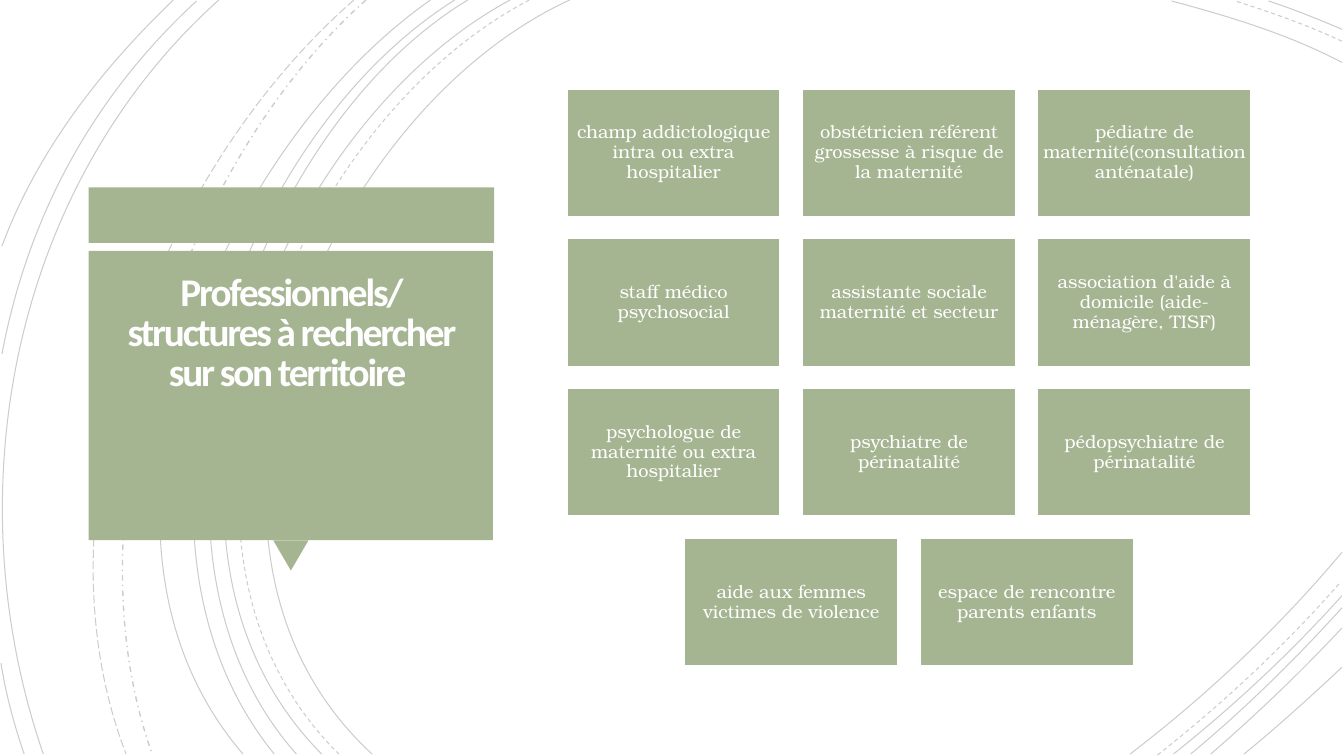
"""Build a slide of perinatal care contacts beside a title callout, over thin arcs."""
from lxml.etree import SubElement
from pptx import Presentation
from pptx.dml.color import RGBColor
from pptx.enum.dml import MSO_LINE
from pptx.enum.shapes import MSO_SHAPE
from pptx.enum.text import MSO_ANCHOR, MSO_AUTO_SIZE, PP_ALIGN
from pptx.oxml.ns import qn
from pptx.util import Inches, Pt

TITLE = "Professionnels/ structures à rechercher sur son territoire "
ROWS = [
    ["champ addictologique intra ou extra hospitalier",
     "obstétricien référent grossesse à risque de la maternité",
     "pédiatre de maternité(consultation anténatale)"],
    ["staff médico psychosocial",
     "assistante sociale maternité et secteur",
     "association d'aide à domicile (aide-ménagère, TISF)"],
    ["psychologue de maternité ou extra hospitalier",
     "psychiatre de périnatalité",
     "pédopsychiatre de périnatalité"],
    ["aide aux femmes victimes de violence",
     "espace de rencontre parents enfants"],
]
SOLID = [
    [(5.65, 0), (3.15, 1.15), (1.43, 5.4), (3.69, 7.48)],
    [(13.31, 0.62), (12.78, 0.34), (12.18, 0.16), (11.62, 0.01)],
    [(11.21, 7.48), (11.97, 6.9), (12.69, 6.22), (13.31, 5.48)],
    [(5.06, 0), (2.7, 1.27), (1.1, 5.37), (3.19, 7.48)],
    [(13.31, 0.29), (13.07, 0.19), (12.83, 0.09), (12.58, 0.01)],
    [(11.64, 7.48), (12.23, 7.01), (12.8, 6.48), (13.31, 5.91)],
    [(4.64, 0), (2.44, 1.33), (1.1, 5.41), (2.94, 7.48)],
    [(11.81, 7.48), (12.34, 7.04), (12.84, 6.55), (13.31, 6.03)],
    [(4.51, 0), (2.31, 1.38), (0.97, 5.33), (2.72, 7.48)],
    [(12.01, 7.48), (12.46, 7.09), (12.9, 6.67), (13.31, 6.23)],
    [(4.27, 0), (2.17, 1.47), (0.53, 5.29), (2.41, 7.48)],
    [(12.34, 7.48), (12.67, 7.21), (12.99, 6.92), (13.31, 6.62)],
    [(2.17, 0), (0.11, 1.85), (-0.46, 4.9), (0.43, 7.48)],
    [(1.95, 0.01), (0.92, 0.96), (0.28, 2.14), (0.02, 3.51)],
    [(0.01, 6.58), (0.06, 6.89), (0.14, 7.19), (0.24, 7.48)],
    [(1.72, 0), (1, 0.69), (0.37, 1.5), (0.02, 2.44)],
]
DASH = [
    [(5.25, 0), (2.85, 1.25), (1.23, 5.37), (3.36, 7.48)],
    [(13.31, 0.41), (12.97, 0.25), (12.6, 0.12), (12.25, 0.01)],
    [(11.48, 7.49), (12.13, 6.98), (12.75, 6.4), (13.3, 5.77)],
]
DOT = [[(3.63, 0), (1.76, 1.66), (0.65, 5.09), (1.51, 7.48)]]
LONG = [[(3.51, 0), (1.57, 1.69), (0.29, 4.99), (1.25, 7.48)]]
ARCS = [
    (SOLID, MSO_LINE.SOLID, 0.75),
    (DASH, MSO_LINE.DASH, 0.75),
    (DOT, MSO_LINE.DASH_DOT, 1),
    (LONG, MSO_LINE.LONG_DASH, 0.75),
]
CALL = [
    (MSO_SHAPE.RECTANGLE, (0.88, 1.86, 4.02, 0.55), 0),
    (MSO_SHAPE.ISOSCELES_TRIANGLE, (2.71, 5.36, 0.35, 0.3), 180),
    (MSO_SHAPE.RECTANGLE, (0.88, 2.49, 4.01, 2.87), 0),
]
GREEN, WHITE, CREAM, BLACK = "A5B592", "FFFFFF", "FFFEFF", "000000"
LEFT, TOP, SPAN, DEPTH = 5.62, 0.88, 6.79, 5.73
WIDE, HIGH = 2.12, 1.27


def tint(code):
    return RGBColor.from_string(code)


def draw_arc(slide, points, dash, width):
    spots = [(Inches(x), Inches(y)) for x, y in points]
    pen = slide.shapes.build_freeform(*spots[0])
    pen.add_line_segments(spots[1:], close=False)
    arc = pen.convert_to_shape()
    arc.shadow.inherit = False
    arc.fill.background()
    arc.line.color.rgb = tint(BLACK)
    arc.line.width = Pt(width)
    arc.line.dash_style = dash
    ink = next(arc.line._ln.iter(qn("a:srgbClr")))
    SubElement(ink, qn("a:alpha"), val="20000")
    trace = next(arc._element.iter(qn("a:path")))
    legs = trace.findall(qn("a:lnTo"))
    curve = SubElement(trace, qn("a:cubicBezTo"))
    for leg in legs:
        curve.append(leg[0])
        trace.remove(leg)


def add_block(slide, kind, box):
    block = slide.shapes.add_shape(kind, *map(Inches, box))
    block.shadow.inherit = False
    block.fill.solid()
    block.fill.fore_color.rgb = tint(GREEN)
    block.line.fill.background()
    return block


def set_text(shape, text, anchor, pads, space, face, size, code):
    frame = shape.text_frame
    frame.text = text
    frame.word_wrap = True
    frame.auto_size = MSO_AUTO_SIZE.NONE
    frame.vertical_anchor = anchor
    (frame.margin_left, frame.margin_top,
     frame.margin_right, frame.margin_bottom) = map(Inches, pads)
    line = frame.paragraphs[0]
    line.alignment = PP_ALIGN.CENTER
    line.line_spacing = space
    run = line.runs[0]
    run.font.name = face
    run.font.size = Pt(size)
    run.font.color.rgb = tint(code)
    return run


def add_title(slide):
    title = slide.shapes.title
    title.left, title.top, title.width, title.height = map(
        Inches, (0.97, 2.57, 3.83, 1.34))
    run = set_text(title, TITLE, MSO_ANCHOR.BOTTOM, (0.25, 0.25, 0.25, 0),
                   0.85, "Calibri", 28, CREAM)
    run.font.bold = True
    run._r.get_or_add_rPr().set("spc", "-150")
    slide.shapes._spTree.append(title._element)


def add_cards(slide):
    across = (SPAN - WIDE) / (len(ROWS[0]) - 1)
    down = (DEPTH - HIGH) / (len(ROWS) - 1)
    for r, row in enumerate(ROWS):
        start = LEFT + (len(ROWS[0]) - len(row)) * across / 2
        for c, text in enumerate(row):
            box = (start + c * across, TOP + r * down, WIDE, HIGH)
            card = add_block(slide, MSO_SHAPE.RECTANGLE, box)
            card.line.color.rgb = tint(WHITE)
            card.line.width = Pt(1.25)
            set_text(card, text, MSO_ANCHOR.MIDDLE, [0.05] * 4,
                     0.9, "TeX Gyre Bonum", 13, WHITE)


def main():
    deck = Presentation()
    deck.slide_width, deck.slide_height = Inches(13.33), Inches(7.5)
    slide = deck.slides.add_slide(deck.slide_layouts[5])
    for arcs, dash, width in ARCS:
        for points in arcs:
            draw_arc(slide, points, dash, width)
    for kind, box, turn in CALL:
        add_block(slide, kind, box).rotation = turn
    add_title(slide)
    add_cards(slide)
    deck.save("out.pptx")


if __name__ == "__main__":
    main()
